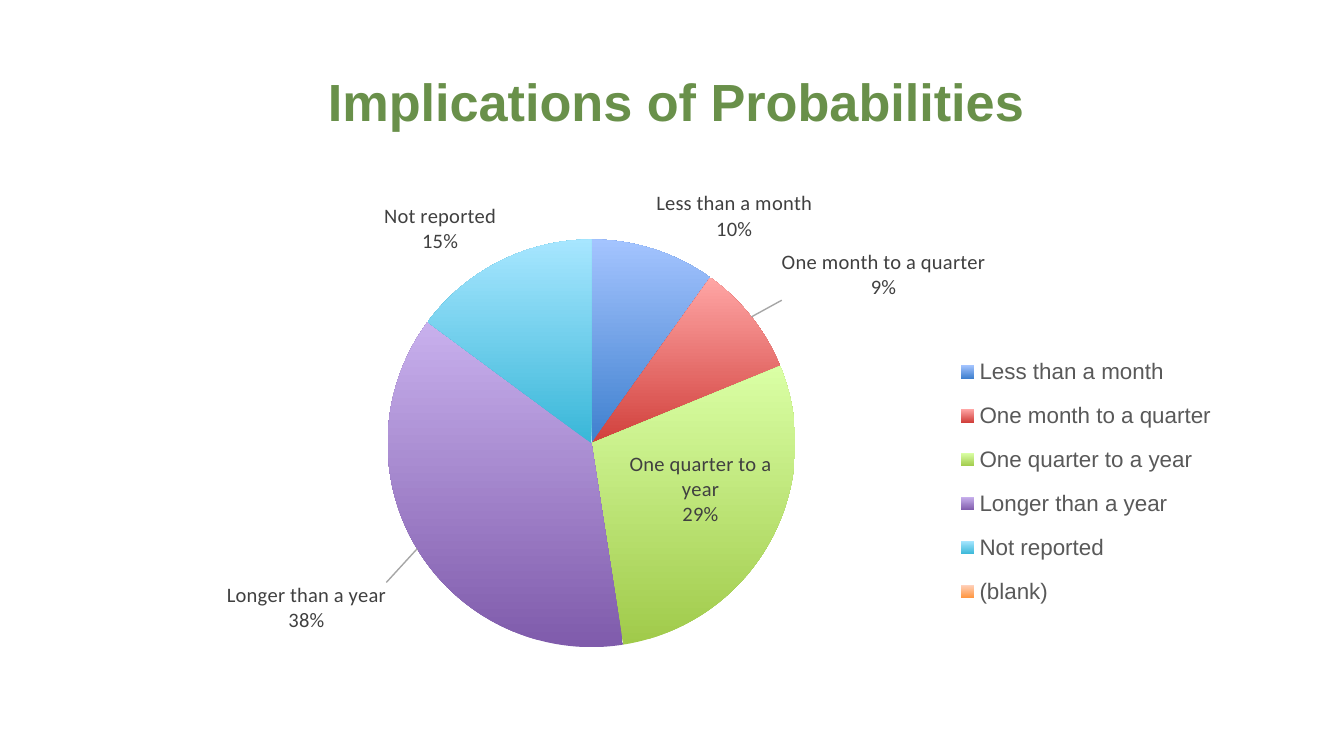
from copy import deepcopy
from typing import NamedTuple, Optional

from lxml import etree
from pptx import Presentation
from pptx.chart.data import CategoryChartData
from pptx.dml.color import RGBColor
from pptx.enum.chart import XL_CHART_TYPE, XL_LABEL_POSITION, XL_LEGEND_POSITION
from pptx.enum.text import MSO_ANCHOR, PP_ALIGN
from pptx.oxml import parse_xml
from pptx.oxml.ns import nsdecls, qn
from pptx.util import Emu, Pt

PIE = XL_CHART_TYPE.PIE
BEST_FIT = XL_LABEL_POSITION.BEST_FIT
RIGHT = XL_LEGEND_POSITION.RIGHT
MIDDLE = MSO_ANCHOR.MIDDLE
CENTER = PP_ALIGN.CENTER

EMU_PER_PX = 914400 / 134.4
TITLE_BOX = (73, 44, 1206, 114)
CHART_BOX = (73, 145, 1206, 591)
PLOT_LAYOUT = {"x": 0.22, "y": 0.16, "w": 0.42, "h": 0.69}
LEGEND_LAYOUT = {"x": 0.73, "y": 0.33, "w": 0.22, "h": 0.48}


class Slice(NamedTuple):
    name: str
    value: Optional[int]
    bottom: str
    top: str
    label_offset: Optional[dict[str, float]] = None


SLICES = [
    Slice("Less than a month", 10, "3F80CE", "A4C4FF"),
    Slice("One month to a quarter", 9, "D1403C", "FFA6A5", {"x": 0.02, "y": -0.02}),
    Slice("One quarter to a year", 29, "A0CA4A", "DAFFA5"),
    Slice("Longer than a year", 38, "7F5BAB", "C8B0ED", {"x": -0.02, "y": 0.05}),
    Slice("Not reported", 15, "39B7D8", "A7E6FF"),
    Slice("(blank)", None, "FF953E", "FFD2BD"),
]


def px(length: int) -> Emu:
    return Emu(round(length * EMU_PER_PX))


def color(value: str) -> RGBColor:
    return RGBColor.from_string(value)


def set_attributes(target, values: dict) -> None:
    for name, value in values.items():
        setattr(target, name, value)


def style_font(font, name: str, size: int, fill: str, bold: bool = False) -> None:
    set_attributes(font, {"name": name, "size": Pt(size), "bold": bold})
    font.color.rgb = color(fill)


def make_layout(values: dict[str, float], inner: bool = False, absolute: bool = True):
    """Return a c:layout; a layout that is not absolute holds offsets."""
    layout = parse_xml(f"<c:layout {nsdecls('c')}><c:manualLayout/></c:layout>")
    settings = {"layoutTarget": "inner"} if inner else {}
    if absolute:
        settings |= {"xMode": "edge", "yMode": "edge"}
    for name, value in (settings | values).items():
        etree.SubElement(layout[0], qn(f"c:{name}")).set("val", str(value))
    return layout


def place(element, layout, index: int) -> None:
    """Put the layout at the index, in place of any earlier one."""
    for earlier in element.findall(qn("c:layout")):
        element.remove(earlier)
    element.insert(index, layout)


def add_title(slide, text: str) -> None:
    shape = slide.shapes.add_textbox(*map(px, TITLE_BOX))
    frame = shape.text_frame
    set_attributes(frame, {"word_wrap": True, "vertical_anchor": MIDDLE})
    paragraph = frame.paragraphs[0]
    paragraph.alignment = CENTER
    run = paragraph.add_run()
    run.text = text
    style_font(run.font, "Arial", 28, "69904A", bold=True)


def color_slices(series) -> None:
    for index, item in enumerate(SLICES):
        fill = series.points[index].format.fill
        fill.gradient()
        fill.gradient_angle = 90
        for stop, value in zip(fill.gradient_stops, (item.bottom, item.top)):
            stop.color.rgb = color(value)


def label_slices(series) -> None:
    labels = series.data_labels
    set_attributes(labels, {
        "show_value": False,
        "show_category_name": True,
        "show_percentage": True,
        "number_format": "0%",
        "number_format_is_linked": False,
        "position": BEST_FIT,
    })
    style_font(labels.font, "Calibri", 11, "404040")

    element = series._element.find(qn("c:dLbls"))
    separator = etree.Element(qn("c:separator"))
    separator.text = "\n"
    element.find(qn("c:showBubbleSize")).addnext(separator)
    shared = [child for child in element if child.tag != qn("c:showLeaderLines")]
    element.append(parse_xml(
        f"<c:leaderLines {nsdecls('c', 'a')}><c:spPr><a:ln w=\"9525\"><a:solidFill>"
        '<a:srgbClr val="A6A6A6"/></a:solidFill></a:ln></c:spPr></c:leaderLines>'
    ))
    moved = [(index, item) for index, item in enumerate(SLICES) if item.label_offset]
    for position, (index, item) in enumerate(moved):
        label = etree.Element(qn("c:dLbl"))
        etree.SubElement(label, qn("c:idx")).set("val", str(index))
        label.append(make_layout(item.label_offset, absolute=False))
        label.extend(deepcopy(shared))
        element.insert(position, label)


def add_pie(slide) -> None:
    data = CategoryChartData()
    data.categories = [item.name for item in SLICES]
    data.add_series("Series 1", [item.value for item in SLICES])
    chart = slide.shapes.add_chart(PIE, *map(px, CHART_BOX), data).chart
    set_attributes(chart, {"has_title": False, "has_legend": True})
    style_font(chart.font, "Arial", 10, "000000")

    set_attributes(chart.legend, {"position": RIGHT, "include_in_layout": False})
    style_font(chart.legend.font, "Arial", 12, "595959")
    place(chart.legend._element, make_layout(LEGEND_LAYOUT), 1)
    plot_area = chart._chartSpace.chart.plotArea
    place(plot_area, make_layout(PLOT_LAYOUT, inner=True), 0)

    plot = chart.plots[0]
    plot.vary_by_categories = True
    color_slices(plot.series[0])
    label_slices(plot.series[0])


def main() -> None:
    presentation = Presentation()
    set_attributes(presentation, {"slide_width": px(1344), "slide_height": px(756)})
    slide = presentation.slides.add_slide(presentation.slide_layouts[6])
    add_title(slide, "Implications of Probabilities")
    add_pie(slide)
    presentation.save("out.pptx")


if __name__ == "__main__":
    main()
